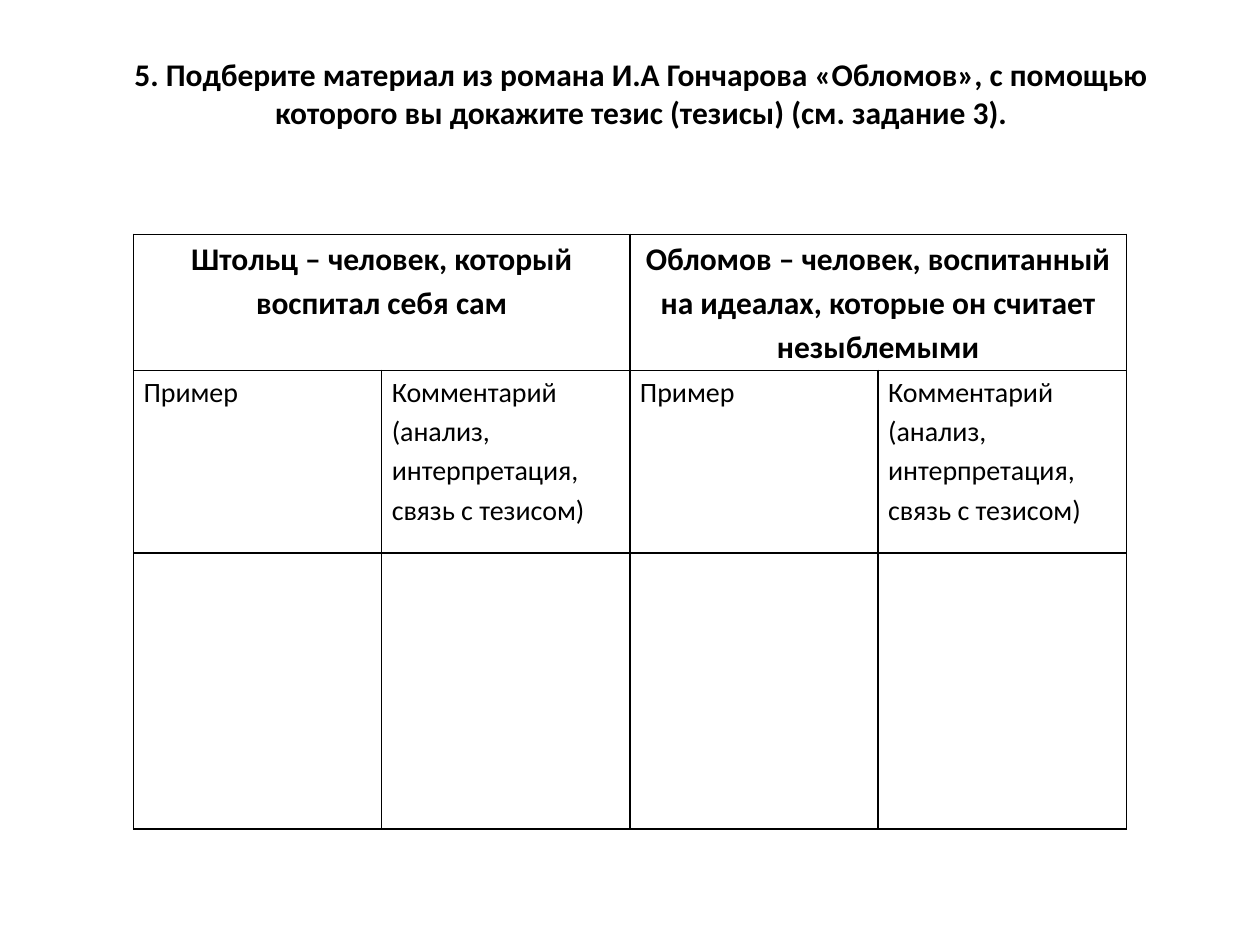
from lxml.etree import SubElement
from pptx import Presentation
from pptx.dml.color import RGBColor
from pptx.enum.text import MSO_ANCHOR, PP_ALIGN
from pptx.oxml.ns import qn
from pptx.util import Inches, Pt

COLORS = {"ink": "000000", "paper": "FFFFFF"}
FONT = "Calibri"
COL_W = 1.97
ROW_H = [1.08, 1.45, 2.19]
HEADERS = [
    "Штольц – человек, который воспитал себя сам",
    "Обломов – человек, воспитанный на идеалах, которые он считает незыблемыми",
]
SUBHEADERS = [
    ["Пример"],
    ["Комментарий (анализ, интерпретация, связь с тезисом)"],
    ["Пример"],
    ["Комментарий", "(анализ, интерпретация, связь с тезисом)"],
]


def write(tf, *lines, size=18, bold=False, align=PP_ALIGN.CENTER, spacing=1.0):
    tf.word_wrap = True
    for i, line in enumerate(lines):
        p = tf.add_paragraph() if i else tf.paragraphs[0]
        p.alignment, p.line_spacing = align, spacing
        r = p.add_run()
        r.text = line
        r.font.name, r.font.size, r.font.bold = FONT, Pt(size), bold
        r.font.color.rgb = RGBColor.from_string(COLORS["ink"])


def add_borders(cell, width=1):
    tc_pr = cell._tc.get_or_add_tcPr()
    for side in ("a:lnL", "a:lnR", "a:lnT", "a:lnB"):
        ln = SubElement(tc_pr, qn(side), w=str(Pt(width)))
        fill = SubElement(ln, qn("a:solidFill"))
        SubElement(fill, qn("a:srgbClr"), val=COLORS["ink"])


prs = Presentation()
prs.slide_width, prs.slide_height = Inches(10), Inches(7.5)
s = prs.slides.add_slide(prs.slide_layouts[6])
s.background.fill.solid()
s.background.fill.fore_color.rgb = RGBColor.from_string(COLORS["paper"])

# Task title
title = s.shapes.add_textbox(Inches(0.59), Inches(0.44), Inches(9), Inches(1.25))
tf = title.text_frame
tf.vertical_anchor = MSO_ANCHOR.TOP
tf.margin_top = 0
write(tf, "5. Подберите материал из романа И.А Гончарова «Обломов», с помощью "
          "которого вы докажите тезис (тезисы) (см. задание 3).", bold=True)

# Table: two heroes, each with an example and a comment column
cols = len(SUBHEADERS)
table = s.shapes.add_table(len(ROW_H), cols, Inches(1.06), Inches(1.86),
                           Inches(COL_W * cols), Inches(sum(ROW_H))).table
table.first_row = table.horz_banding = False
for col in table.columns:
    col.width = Inches(COL_W)
for row, height in zip(table.rows, ROW_H):
    row.height = Inches(height)
    for cell in row.cells:
        cell.margin_left = cell.margin_right = Inches(0.08)
        cell.margin_top = cell.margin_bottom = 0
        add_borders(cell)
        cell.fill.background()

for i, header in enumerate(HEADERS):
    cell = table.cell(0, 2 * i)
    cell.merge(table.cell(0, 2 * i + 1))
    write(cell.text_frame, header, bold=True, spacing=1.15)
for i, lines in enumerate(SUBHEADERS):
    write(table.cell(1, i).text_frame, *lines, size=16,
          align=PP_ALIGN.JUSTIFY, spacing=1.15)

prs.save("out.pptx")
